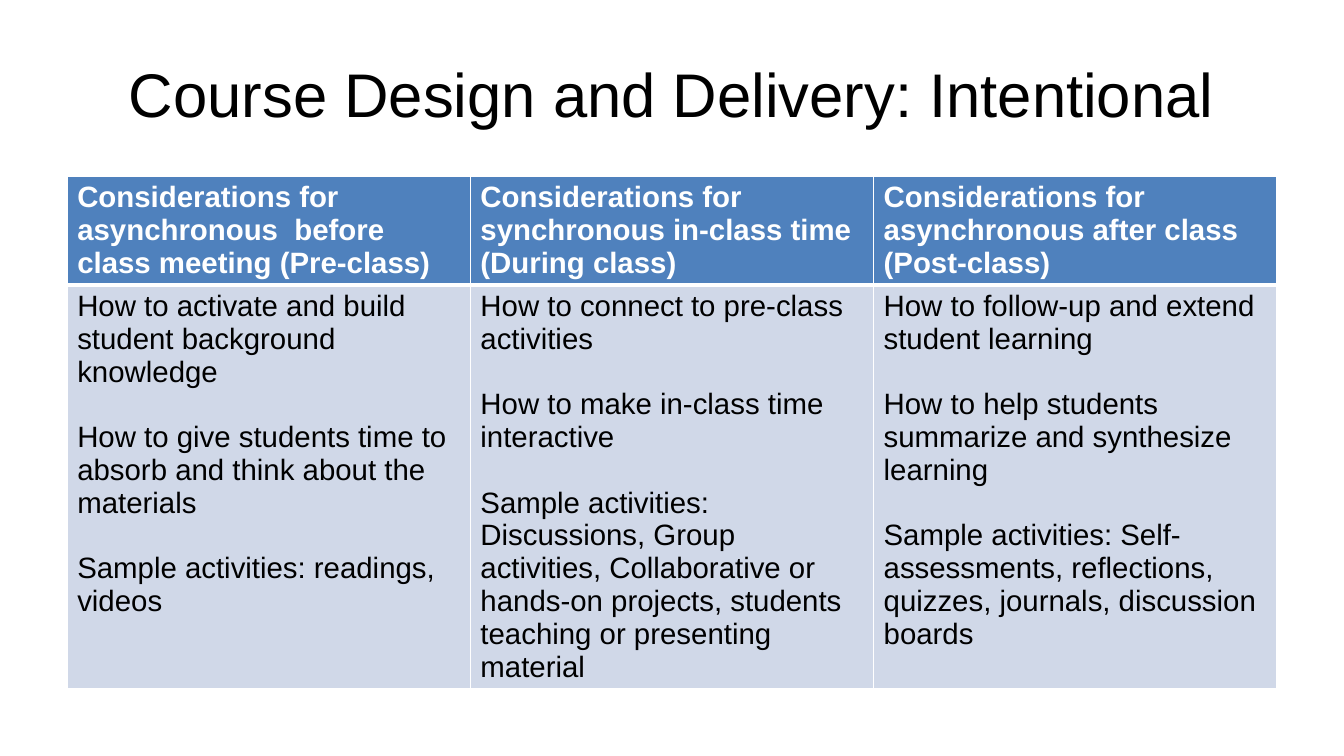
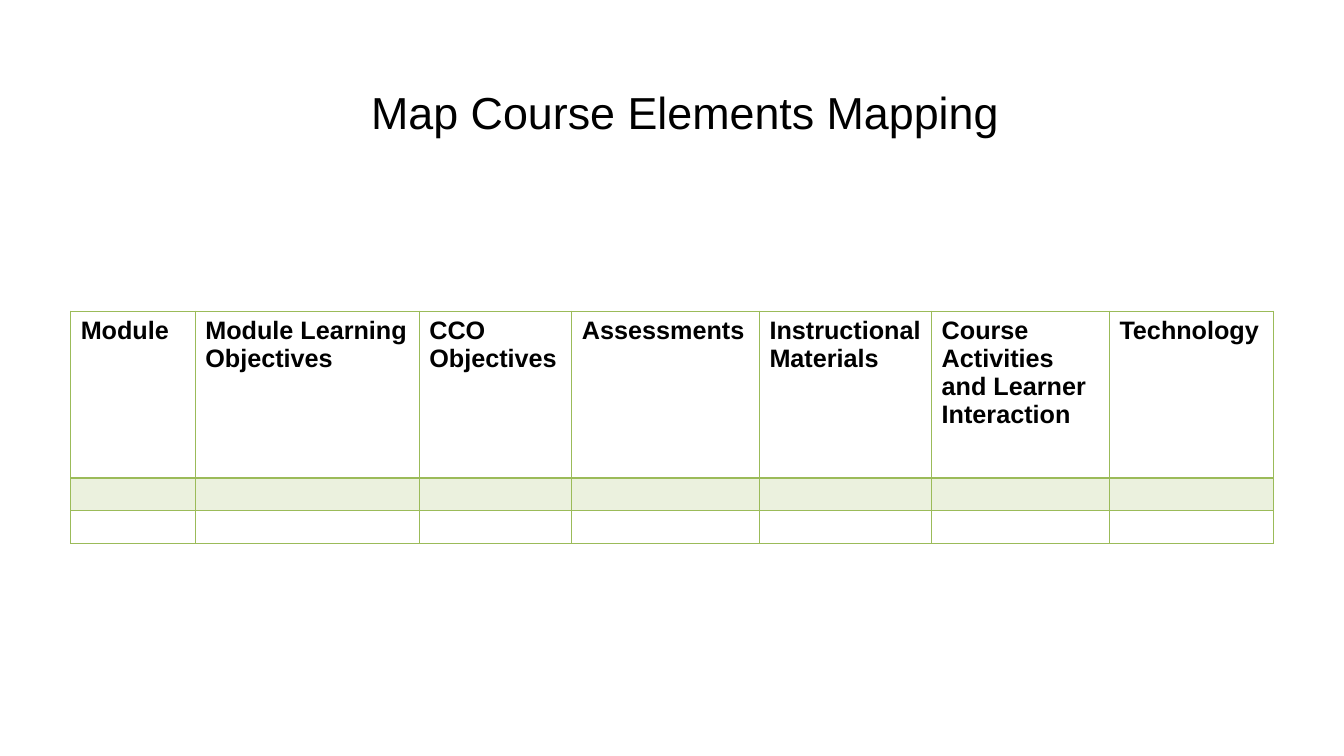
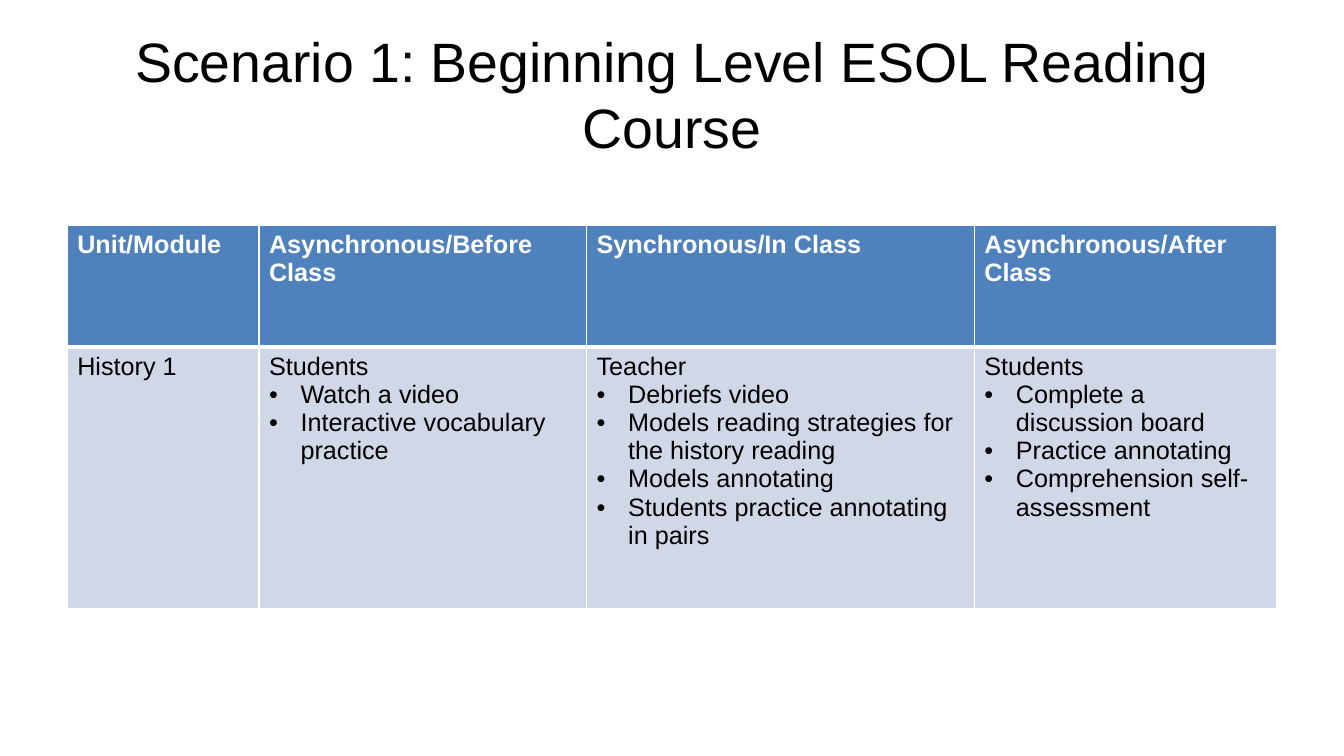
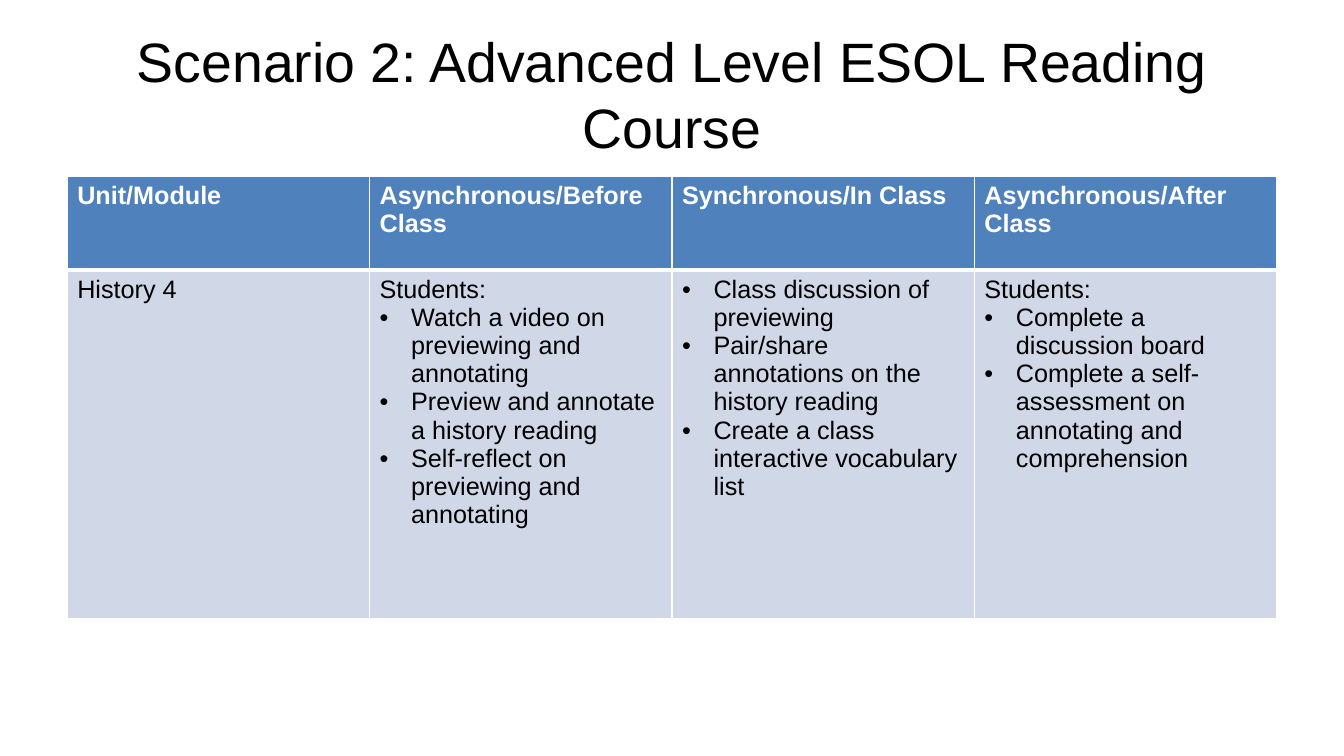
"""Build four slides of tables on course design and delivery."""
from lxml import etree
from pptx import Presentation
from pptx.dml.color import RGBColor
from pptx.enum.text import MSO_ANCHOR, MSO_AUTO_SIZE, PP_ALIGN
from pptx.oxml.ns import qn
from pptx.util import Pt

CENTER = PP_ALIGN.CENTER
MIDDLE = MSO_ANCHOR.MIDDLE
NO_AUTOFIT = MSO_AUTO_SIZE.NONE
TITLE_ONLY = 5
FONT = "Arial"
BULLET_INDENT = 22.5
COLORS = {"black": "000000", "white": "FFFFFF", "blue": "4F81BD",
          "pale_blue": "D0D8E8", "green": "9BBB59", "pale_green": "EBF1DE"}
THEMES = {
    "blue": {"fills": ["blue", "pale_blue"], "header_text": "white",
             "border": "white", "header_rule": 3},
    "green": {"fills": ["white", "pale_green", "white"], "header_text": "black",
              "border": "green", "header_rule": 2},
}
TITLE_BOX = (48, 21.6, 864, 90)

SLIDES = [
    {
        "title": "Course Design and Delivery: Intentional",
        "title_size": 44, "title_box": TITLE_BOX,
        "theme": "blue", "size": 21, "gap": 23.4,
        "origin": (48, 126), "columns": [288] * 3, "rows": [77, 288],
        "header": ["Considerations for asynchronous  before class meeting (Pre-class)",
                   "Considerations for synchronous in-class time (During class)",
                   "Considerations for asynchronous after class (Post-class)"],
        "body": [[
            (["How to activate and build student background knowledge",
              "How to give students time to absorb and think about the materials",
              "Sample activities: readings, videos"], []),
            (["How to connect to pre-class activities",
              "How to make in-class time interactive",
              "Sample activities: Discussions, Group activities, Collaborative or "
              "hands-on projects, students teaching or presenting material"], []),
            (["How to follow-up and extend student learning",
              "How to help students summarize and synthesize learning",
              "Sample activities: Self-assessments, reflections, quizzes, journals, "
              "discussion boards"], []),
        ]],
    },
    {
        "title": "Map Course Elements Mapping",
        "title_size": 32, "title_box": (48, 50.4, 883, 58),
        "theme": "green", "size": 18, "gap": 0,
        "origin": (50.5, 222.3), "columns": [89, 160, 109, 134, 123, 127, 117],
        "rows": [119, 23.4, 23.4],
        "header": ["Module", "Module Learning Objectives", "CCO Objectives",
                   "Assessments", "Instructional Materials",
                   "Course Activities and Learner Interaction", "Technology"],
        "body": [[([], [])] * 7] * 2,
    },
    {
        "title": "Scenario 1: Beginning Level ESOL Reading Course",
        "title_size": 39.6, "title_box": TITLE_BOX,
        "theme": "blue", "size": 18, "gap": 0,
        "origin": (48, 161), "columns": [137, 234, 277, 216], "rows": [87, 187],
        "header": ["Unit/Module", "Asynchronous/Before Class",
                   "Synchronous/In Class", "Asynchronous/After Class"],
        "body": [[
            (["History 1"], []),
            (["Students"], ["Watch a video", "Interactive vocabulary practice"]),
            (["Teacher"], ["Debriefs video",
                           "Models reading strategies for the history reading",
                           "Models annotating",
                           "Students practice annotating in pairs"]),
            (["Students"], ["Complete a discussion board", "Practice annotating",
                            "Comprehension self-assessment"]),
        ]],
    },
    {
        "title": "Scenario 2: Advanced Level ESOL Reading Course",
        "title_size": 39.6, "title_box": TITLE_BOX,
        "theme": "blue", "size": 18, "gap": 0,
        "origin": (48, 126), "columns": [216] * 4, "rows": [67, 249],
        "header": ["Unit/Module", "Asynchronous/Before Class",
                   "Synchronous/In Class", "Asynchronous/After Class"],
        "body": [[
            (["History 4"], []),
            (["Students:"], ["Watch a video on previewing and annotating",
                             "Preview and annotate a history reading",
                             "Self-reflect on previewing and annotating"]),
            ([], ["Class discussion of previewing",
                  "Pair/share annotations on the history reading",
                  "Create a class interactive vocabulary list"]),
            (["Students:"], ["Complete a discussion board",
                             "Complete a self- assessment on annotating and "
                             "comprehension"]),
        ]],
    },
]


def rgb(name):
    return RGBColor.from_string(COLORS[name])


def add_span(para, text, color, **formats):
    span = para.add_run()
    span.text = text
    span.font.color.rgb = rgb(color)
    for name, value in {"name": FONT, **formats}.items():
        setattr(span.font, name, value)


def add_title(page, content):
    title = page.shapes.title
    for name, value in zip(("left", "top", "width", "height"), content["title_box"]):
        setattr(title, name, Pt(value))
    frame = title.text_frame
    for name, value in {"word_wrap": True, "auto_size": NO_AUTOFIT,
                        "vertical_anchor": MIDDLE}.items():
        setattr(frame, name, value)
    para = frame.paragraphs[0]
    para.alignment = CENTER
    add_span(para, content["title"], "black", size=Pt(content["title_size"]))


def set_bullet(para):
    properties = para._p.get_or_add_pPr()
    properties.set("marL", str(Pt(BULLET_INDENT)))
    properties.set("indent", str(-Pt(BULLET_INDENT)))
    etree.SubElement(properties, qn("a:buFont"), typeface=FONT)
    etree.SubElement(properties, qn("a:buChar"), char="•")


def set_borders(cell, color, widths):
    properties = cell._tc.get_or_add_tcPr()
    for index, (side, width) in enumerate(widths.items()):
        line = etree.Element(qn(f"a:ln{side}"), w=str(Pt(width)))
        fill = etree.SubElement(line, qn("a:solidFill"))
        etree.SubElement(fill, qn("a:srgbClr"), val=COLORS[color])
        properties.insert(index, line)


def fill_cell(cell, paragraphs, bullets, color, gap, **formats):
    frame = cell.text_frame
    for index, text in enumerate(paragraphs + bullets):
        para = frame.add_paragraph() if index else frame.paragraphs[0]
        if index and gap:
            para.space_before = Pt(gap)
        if index >= len(paragraphs):
            set_bullet(para)
        add_span(para, text, color, **formats)
    if not paragraphs + bullets:
        cell.margin_top = cell.margin_bottom = 0


def add_grid(page, content):
    theme = THEMES[content["theme"]]
    columns, heights = content["columns"], content["rows"]
    left, top = content["origin"]
    table = page.shapes.add_table(len(heights), len(columns), Pt(left), Pt(top),
                                  Pt(sum(columns)), Pt(sum(heights))).table
    table.horz_banding = False
    for column, width in zip(table.columns, columns):
        column.width = Pt(width)
    rows = [[([text], []) for text in content["header"]]] + content["body"]
    for row_index, (row, height) in enumerate(zip(rows, heights)):
        table.rows[row_index].height = Pt(height)
        is_header = row_index == 0
        widths = {"L": 1, "R": 1,
                  "T": theme["header_rule"] if row_index == 1 else 1,
                  "B": theme["header_rule"] if is_header else 1}
        for column_index, (paragraphs, bullets) in enumerate(row):
            cell = table.cell(row_index, column_index)
            cell.fill.solid()
            cell.fill.fore_color.rgb = rgb(theme["fills"][row_index])
            set_borders(cell, theme["border"], widths)
            fill_cell(cell, paragraphs, bullets,
                      theme["header_text"] if is_header else "black",
                      content["gap"], size=Pt(content["size"]), bold=is_header)


def main():
    deck = Presentation()
    deck.slide_width, deck.slide_height = Pt(960), Pt(540)
    for content in SLIDES:
        page = deck.slides.add_slide(deck.slide_layouts[TITLE_ONLY])
        add_title(page, content)
        add_grid(page, content)
    deck.save("out.pptx")


if __name__ == "__main__":
    main()
